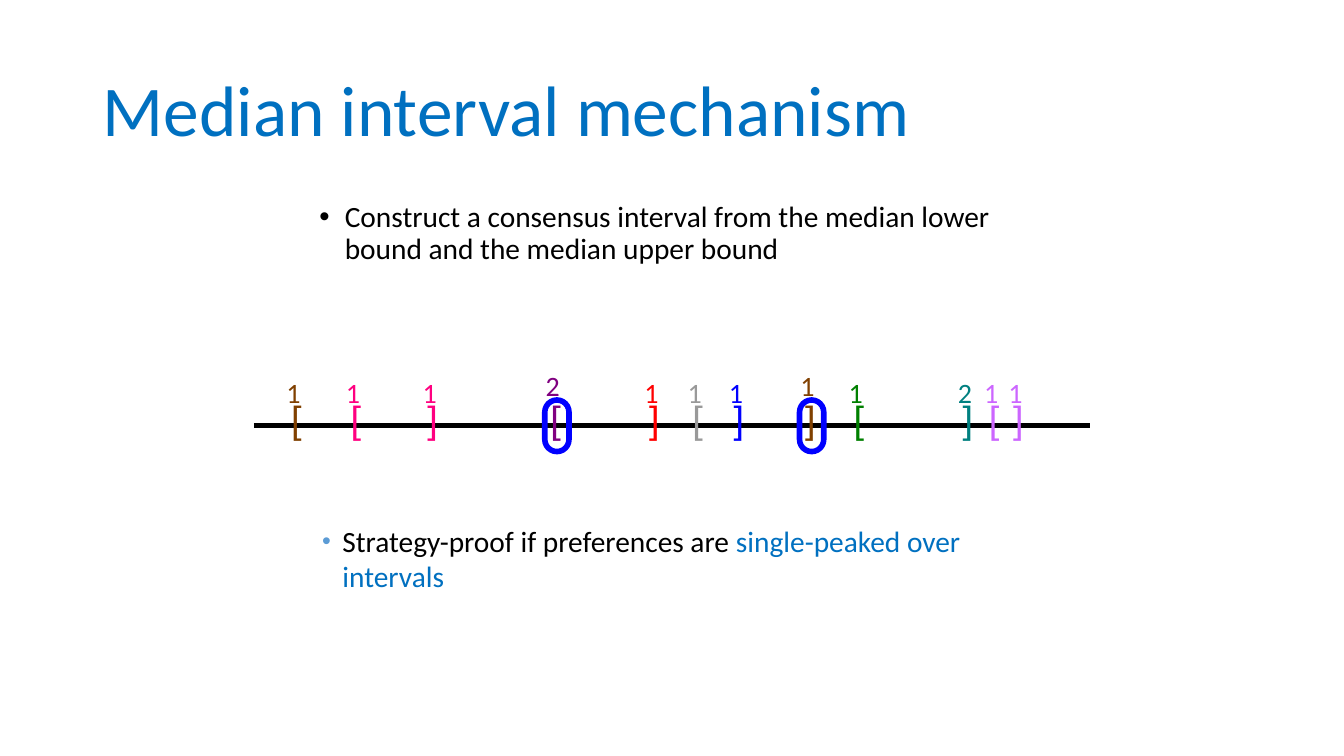
from lxml import etree
from pptx import Presentation
from pptx import util as u
from pptx.dml.color import RGBColor
from pptx.enum import shapes, text
from pptx.oxml.ns import qn

BLUE = "0070C0"
# Distance along the axis in cm, count, bracket, colour, is it a median
MARKS = [
    (0.94, "1", "[", "804000", False),
    (2.44, "1", "[", "FF0080", False),
    (4.37, "1", "]", "FF0080", False),
    (7.47, "2", "[", "800080", True),
    (9.96, "1", "]", "FF0000", False),
    (11.05, "1", "[", "999999", False),
    (12.09, "1", "]", "0000FF", False),
    (13.89, "1", "]", "804000", True),
    (15.11, "1", "[", "008000", False),
    (17.86, "2", "]", "008080", False),
    (18.52, "1", "[", "CC66FF", False),
    (19.13, "1", "]", "CC66FF", False),
]


def paint(code):
    return RGBColor.from_string(code)


def style(run, size, code, face="Calibri"):
    run.font.size = u.Pt(size)
    run.font.name = face
    run.font.color.rgb = paint(code)


def write(slide, box, words, size, code, face="Calibri", inset=0.0, wrap=True,
          anchor=text.MSO_ANCHOR.TOP):
    """Add a text box with one styled line and return its paragraph."""
    frame = slide.shapes.add_textbox(*map(u.Cm, box)).text_frame
    frame.word_wrap = wrap
    frame.vertical_anchor = anchor
    frame.margin_left = frame.margin_right = u.Cm(inset)
    frame.margin_top = frame.margin_bottom = u.Cm(inset / 2)
    frame.text = words
    line = frame.paragraphs[0]
    style(line.runs[0], size, code, face)
    return line


def title(slide, box):
    line = write(slide, box, "Median interval mechanism", 51, BLUE,
                 inset=0.25, anchor=text.MSO_ANCHOR.MIDDLE)
    line.line_spacing = 0.9


def point(slide, box, words, hang, accent="", tint=None, scale=100):
    """Place one bulleted statement, with an optional coloured ending."""
    line = write(slide, box, words, 21, "000000", inset=0.25)
    if accent:
        run = line.add_run()
        run.text = accent
        style(run, 21, BLUE)
    props = line._p.get_or_add_pPr()
    props.set("marL", str(u.Cm(1.73)))
    props.set("indent", str(-u.Cm(hang)))
    if tint:
        color = etree.SubElement(props, qn("a:buClr"))
        etree.SubElement(color, qn("a:srgbClr"), val=tint)
    etree.SubElement(props, qn("a:buSzPct"), val=str(scale * 1000))
    etree.SubElement(props, qn("a:buFont"), typeface="Arial")
    etree.SubElement(props, qn("a:buChar"), char="•")
    return line


def ring(slide, box):
    oval = slide.shapes.add_shape(shapes.MSO_SHAPE.ROUNDED_RECTANGLE, *map(u.Cm, box))
    oval.adjustments[0] = 0.5
    oval.shadow.inherit = False
    oval.fill.background()
    oval.line.color.rgb = paint("0000FF")
    oval.line.width = u.Pt(4)


def scale(slide, left, top, width):
    """Draw the axis with its interval bounds; medians are ringed."""
    axis = slide.shapes.add_connector(
        shapes.MSO_CONNECTOR.STRAIGHT,
        u.Cm(left), u.Cm(top), u.Cm(left + width), u.Cm(top))
    axis.line.color.rgb = paint("000000")
    axis.line.width = u.Pt(3)
    etree.SubElement(axis._element.spPr, qn("a:effectLst"))

    for along, count, sign, code, median in MARKS:
        x = left + along
        rise = 1.45 if median else 1.27
        write(slide, (x, top - 0.76, 0.53, 1.57), sign, 27, code, "Arial")
        write(slide, (x - 0.12, top - rise, 0.36, 0.86), count, 20, code,
              wrap=False, anchor=text.MSO_ANCHOR.MIDDLE)
        if median:
            ring(slide, (x - 0.14, top - 0.64, 0.61, 1.3))


def main():
    deck = Presentation()
    deck.slide_width, deck.slide_height = u.Cm(33.87), u.Cm(19.05)
    slide = deck.slides.add_slide(deck.slide_layouts[6])

    title(slide, (2.34, 1.02, 29.21, 3.68))
    rule = point(slide, (6.71, 4.98, 20.2, 2.31),
                 "Construct a consensus interval from the median lower bound "
                 "and the median upper bound", 0.64)
    rule.line_spacing = 0.9
    scale(slide, 6.4, 10.72, 21.08)
    point(slide, (6.65, 13.06, 20.2, 2.31), "Strategy-proof if preferences are ",
          0.51, "single-peaked over intervals", "5B9BD5", 85)

    deck.save("out.pptx")


if __name__ == "__main__":
    main()
